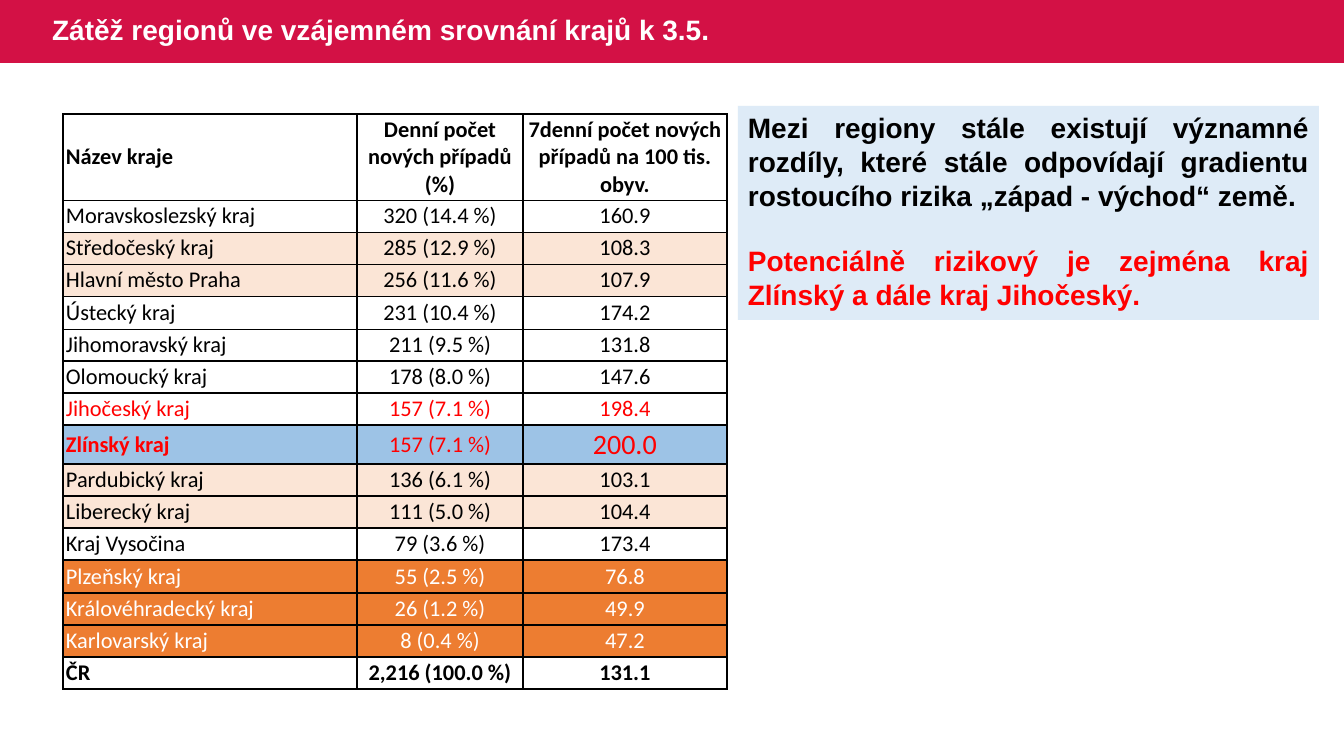
from lxml.etree import SubElement
from pptx import Presentation
from pptx.dml.color import RGBColor
from pptx.enum.shapes import MSO_SHAPE as Shape
from pptx.enum.text import MSO_ANCHOR as Anchor, MSO_AUTO_SIZE as AutoSize, PP_ALIGN as Align
from pptx.oxml.ns import qn
from pptx.util import Emu, Pt

COLORS = {
    "black": "000000",
    "white": "FFFFFF",
    "red": "FF0000",
    "band": "D31145",
    "note": "DEEBF7",
    "peach": "FBE5D6",
    "blue": "9DC3E6",
    "orange": "ED7D31",
}

HEADER = ("Název kraje", "Denní počet nových případů (%)", "7denní počet nových případů na 100 tis. obyv.")
REGIONS = [
    ("Moravskoslezský kraj", "320 (14.4 %)", "160.9"),
    ("Středočeský kraj", "285 (12.9 %)", "108.3"),
    ("Hlavní město Praha", "256 (11.6 %)", "107.9"),
    ("Ústecký kraj", "231 (10.4 %)", "174.2"),
    ("Jihomoravský kraj", "211 (9.5 %)", "131.8"),
    ("Olomoucký kraj", "178 (8.0 %)", "147.6"),
    ("Jihočeský kraj", "157 (7.1 %)", "198.4"),
    ("Zlínský kraj", "157 (7.1 %)", "200.0"),
    ("Pardubický kraj", "136 (6.1 %)", "103.1"),
    ("Liberecký kraj", "111 (5.0 %)", "104.4"),
    ("Kraj Vysočina", "79 (3.6 %)", "173.4"),
    ("Plzeňský kraj", "55 (2.5 %)", "76.8"),
    ("Královéhradecký kraj", "26 (1.2 %)", "49.9"),
    ("Karlovarský kraj", "8 (0.4 %)", "47.2"),
]
TOTAL = ("ČR", "2,216 (100.0 %)", "131.1")

COLUMN_WIDTHS = (294, 166, 204)
HEADER_ROW, HIGHLIGHT_ROW, TOTAL_ROW = 0, 8, 15
ROW_FILLS = {2: "peach", 3: "peach", 8: "blue", 9: "peach", 10: "peach", 12: "orange", 13: "orange", 14: "orange"}
ROW_INKS = {7: "red", 8: "red", 12: "white", 13: "white", 14: "white"}


def px(length):
    return Emu(round(length * 914400 / 100.8))


def rgb(name):
    return RGBColor.from_string(COLORS[name])


def write(paragraph, text, font="Arial", size=20, color="black", bold=True, align=Align.LEFT):
    paragraph.alignment = align
    run = paragraph.add_run()
    run.text = text
    run.font.name = font
    run.font.size = Pt(size)
    run.font.bold = bold
    run.font.color.rgb = rgb(color)


def row_height(row):
    special = {HEADER_ROW: 86, HIGHLIGHT_ROW: 39}
    return special.get(row, 33 if row % 4 == 0 else 32)


def cell_format(row, column):
    highlight = row == HIGHLIGHT_ROW
    return {
        "font": "Calibri",
        "size": 20 if highlight and column == 2 else 16,
        "color": ROW_INKS.get(row, "black"),
        "bold": row in (HEADER_ROW, TOTAL_ROW) or (highlight and column == 0),
        "align": Align.CENTER if column else Align.LEFT,
    }


class RegionSlide:
    def __init__(self):
        self.presentation = Presentation()
        self.presentation.slide_width = px(1344)
        self.presentation.slide_height = px(756)
        self.slide = self.presentation.slides.add_slide(self.presentation.slide_layouts[5])

    def box(self, left, top, width, height, fill):
        shape = self.slide.shapes.add_shape(Shape.RECTANGLE, px(left), px(top), px(width), px(height))
        shape.shadow.inherit = False
        shape.fill.solid()
        shape.fill.fore_color.rgb = rgb(fill)
        shape.line.fill.background()
        return shape

    def title(self, text, left, top, width, height):
        title = self.slide.shapes.title
        title.left, title.top, title.width, title.height = map(px, (left, top, width, height))
        frame = title.text_frame
        frame.auto_size = AutoSize.NONE
        frame.word_wrap = True
        frame.vertical_anchor = Anchor.MIDDLE
        frame.paragraphs[0].line_spacing = 0.9
        write(frame.paragraphs[0], text, color="white")
        title.element.getparent().append(title.element)

    def note(self, left, top, width, height, first, warning):
        frame = self.box(left, top, width, height, "note").text_frame
        frame.word_wrap = True
        frame.vertical_anchor = Anchor.TOP
        write(frame.paragraphs[0], first, align=Align.JUSTIFY)
        paragraph = frame.add_paragraph()
        paragraph.space_before = Pt(23)
        write(paragraph, warning, color="red", align=Align.JUSTIFY)

    def border(self, cell):
        properties = cell._tc.get_or_add_tcPr()
        for side in ("lnL", "lnR", "lnT", "lnB"):
            line = SubElement(properties, qn(f"a:{side}"), w=str(Pt(1)))
            fill = SubElement(line, qn("a:solidFill"))
            SubElement(fill, qn("a:srgbClr"), val=COLORS["black"])

    def table(self, left, top, rows):
        heights = [row_height(row) for row in range(len(rows))]
        table = self.slide.shapes.add_table(
            len(rows), len(COLUMN_WIDTHS), px(left), px(top), px(sum(COLUMN_WIDTHS)), px(sum(heights))
        ).table
        table.first_row = table.horz_banding = False
        for column, width in enumerate(COLUMN_WIDTHS):
            table.columns[column].width = px(width)
        for row, texts in enumerate(rows):
            table.rows[row].height = px(heights[row])
            for column, text in enumerate(texts):
                cell = table.cell(row, column)
                cell.margin_left = cell.margin_right = px(3)
                cell.margin_top = cell.margin_bottom = px(2)
                cell.vertical_anchor = Anchor.MIDDLE
                self.border(cell)
                cell.fill.solid()
                cell.fill.fore_color.rgb = rgb(ROW_FILLS.get(row, "white"))
                write(cell.text_frame.paragraphs[0], text, **cell_format(row, column))


def main():
    page = RegionSlide()
    page.box(0, 0, 1344, 63, "band")
    page.title("Zátěž regionů ve vzájemném srovnání krajů k 3.5.", 42, 0, 820, 63)
    page.note(
        738, 106, 581, 214,
        "Mezi regiony stále existují významné rozdíly, které stále odpovídají "
        "gradientu rostoucího rizika „západ - východ“ země.",
        "Potenciálně rizikový je zejména kraj Zlínský a dále kraj Jihočeský.",
    )
    page.table(63, 114, [HEADER, *REGIONS, TOTAL])
    page.presentation.save("out.pptx")


if __name__ == "__main__":
    main()
